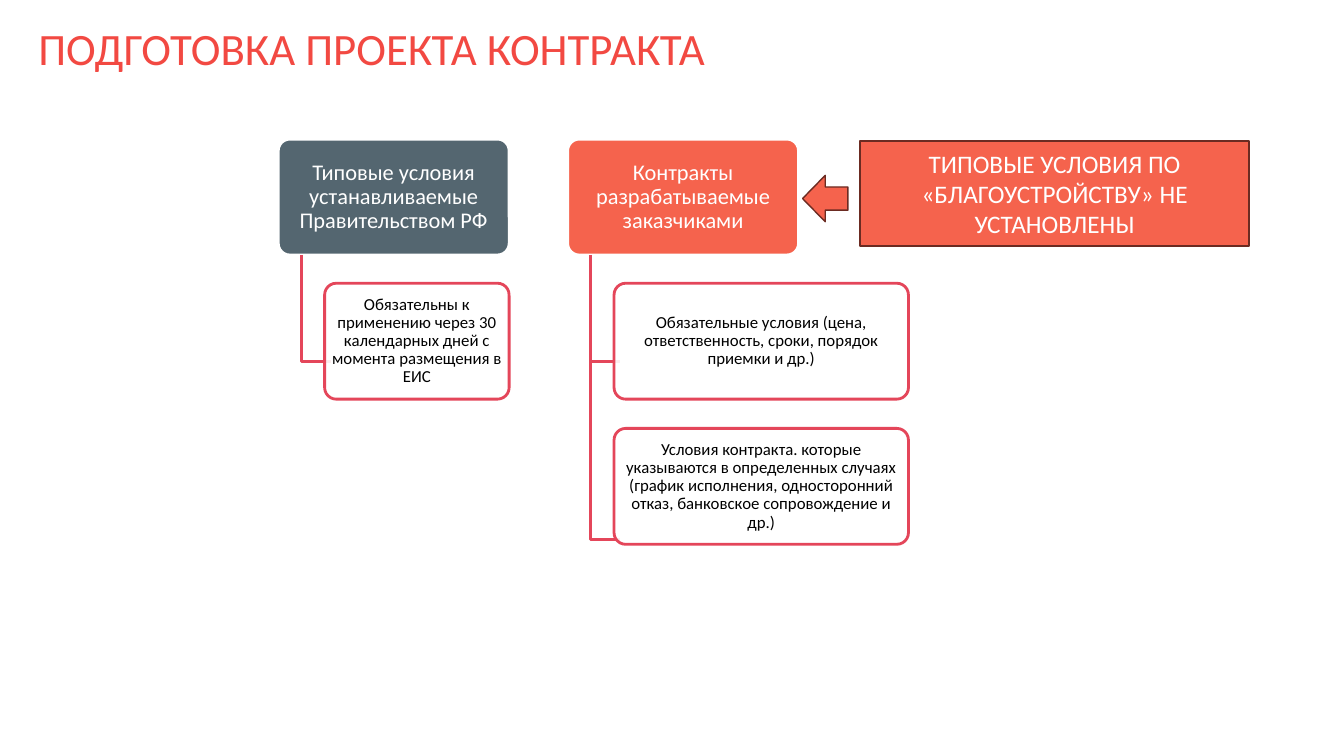
import pptx
import pptx.dml.color
import pptx.enum.shapes
import pptx.enum.text
import pptx.oxml.ns
import pptx.util
from lxml import etree

Inches = pptx.util.Inches
Pt = pptx.util.Pt
SHAPE = pptx.enum.shapes.MSO_SHAPE
ALIGN = pptx.enum.text.PP_ALIGN
ANCHOR = pptx.enum.text.MSO_ANCHOR

COLOURS = {
    "title": "F24942",
    "slate": "546670",
    "coral": "F5634D",
    "branch": "E4465A",
    "edge": "6B2B22",
    "white": "FFFFFF",
    "black": "000000",
}

# Tree layout in inches
HEADER_TOP, HEADER_WIDTH, NODE_HEIGHT = 1.38, 2.29, 1.15
CHILD_TOP, CHILD_STEP = 2.81, 1.44
CHILD_INDENT, STEM_INDENT, BRANCH_LENGTH = 0.46, 0.23, 0.29
BRANCH_ENDS = (3.59, 5.35)

BRANCHES = [
    {
        "left": 2.76,
        "fill": "slate",
        "header": "Типовые условия устанавливаемые Правительством РФ",
        "child_width": 1.83,
        "children": [
            "Обязательны к применению через 30 календарных дней с момента размещения в ЕИС",
        ],
    },
    {
        "left": 5.63,
        "fill": "coral",
        "header": "Контракты разрабатываемые заказчиками",
        "child_width": 2.92,
        "children": [
            "Обязательные условия (цена, ответственность, сроки, порядок приемки и др.)",
            "Условия контракта. которые указываются в определенных случаях "
            "(график исполнения, односторонний отказ, банковское сопровождение и др.)",
        ],
    },
]


def colour(name):
    return pptx.dml.color.RGBColor.from_string(COLOURS[name])


def set_attributes(target, values):
    for name, value in values.items():
        setattr(target, name, value)


def write_text(shape, text, size, ink, frame_format, para_format):
    frame = shape.text_frame
    set_attributes(frame, {"word_wrap": True, **frame_format})
    para = frame.paragraphs[0]
    set_attributes(para, para_format)
    span = para.add_run()
    span.text = text
    set_attributes(span.font, {"name": "Calibri", "size": Pt(size)})
    span.font.color.rgb = colour(ink)


def set_line(shape, ink, width):
    shape.shadow.inherit = False
    shape.line.color.rgb = colour(ink)
    shape.line.width = Pt(width)


def add_block(page, kind, place, fill, line, width):
    shape = page.shapes.add_shape(kind, *map(Inches, place))
    shape.fill.solid()
    shape.fill.fore_color.rgb = colour(fill)
    set_line(shape, line, width)
    return shape


def add_node(page, place, fill, line, text, size, ink):
    node = add_block(page, SHAPE.ROUNDED_RECTANGLE, place, fill, line, 2)
    node.adjustments[0] = 0.1
    frame_format = {
        "vertical_anchor": ANCHOR.MIDDLE,
        "margin_left": Inches(0.03),
        "margin_right": Inches(0.03),
        "margin_top": Inches(0.02),
        "margin_bottom": Inches(0.02),
    }
    write_text(node, text, size, ink, frame_format,
               {"alignment": ALIGN.CENTER, "line_spacing": 0.9})
    return node


def set_opacity(shape, percent):
    tag = pptx.oxml.ns.qn
    fill = shape.fill._xPr.find(tag("a:solidFill"))
    etree.SubElement(fill[0], tag("a:alpha"), val=str(percent * 1000))


def add_elbow(page, left, top, bottom):
    builder = page.shapes.build_freeform(Inches(left), Inches(top))
    corners = [(left, bottom), (left + BRANCH_LENGTH, bottom)]
    builder.add_line_segments(
        [(Inches(x), Inches(y)) for x, y in corners], close=False)
    elbow = builder.convert_to_shape()
    elbow.fill.background()
    set_line(elbow, "branch", 2)


def add_branch(page, branch):
    left = branch["left"]
    add_node(page, (left, HEADER_TOP, HEADER_WIDTH, NODE_HEIGHT),
             branch["fill"], "white", branch["header"], 16, "white")
    for index, text in enumerate(branch["children"]):
        add_elbow(page, left + STEM_INDENT, HEADER_TOP + NODE_HEIGHT,
                  BRANCH_ENDS[index])
        place = (left + CHILD_INDENT, CHILD_TOP + index * CHILD_STEP,
                 branch["child_width"], NODE_HEIGHT)
        child = add_node(page, place, "white", "branch", text, 12, "black")
        set_opacity(child, 90)


def add_title(page, text):
    box = page.shapes.add_textbox(*map(Inches, (0.38, 0.22, 11.45, 0.72)))
    write_text(box, text, 32, "title", {"margin_left": 0},
               {"line_spacing": 0.9})


def add_callout(page, text):
    box = add_block(page, SHAPE.RECTANGLE, (8.53, 1.4, 3.86, 1.04),
                    "coral", "edge", 1)
    write_text(box, text, 18, "white", {"vertical_anchor": ANCHOR.MIDDLE},
               {"alignment": ALIGN.CENTER})
    add_block(page, SHAPE.LEFT_ARROW, (7.96, 1.74, 0.45, 0.46),
              "coral", "edge", 1)


def main():
    deck = pptx.Presentation()
    set_attributes(deck, {"slide_width": Inches(13.33),
                          "slide_height": Inches(7.5)})
    page = deck.slides.add_slide(deck.slide_layouts[6])

    # Heading
    add_title(page, "ПОДГОТОВКА ПРОЕКТА КОНТРАКТА")

    # Contract tree
    for branch in BRANCHES:
        add_branch(page, branch)

    # Callout with its arrow
    add_callout(page, "ТИПОВЫЕ УСЛОВИЯ ПО «БЛАГОУСТРОЙСТВУ» НЕ УСТАНОВЛЕНЫ")

    deck.save("out.pptx")


if __name__ == "__main__":
    main()
